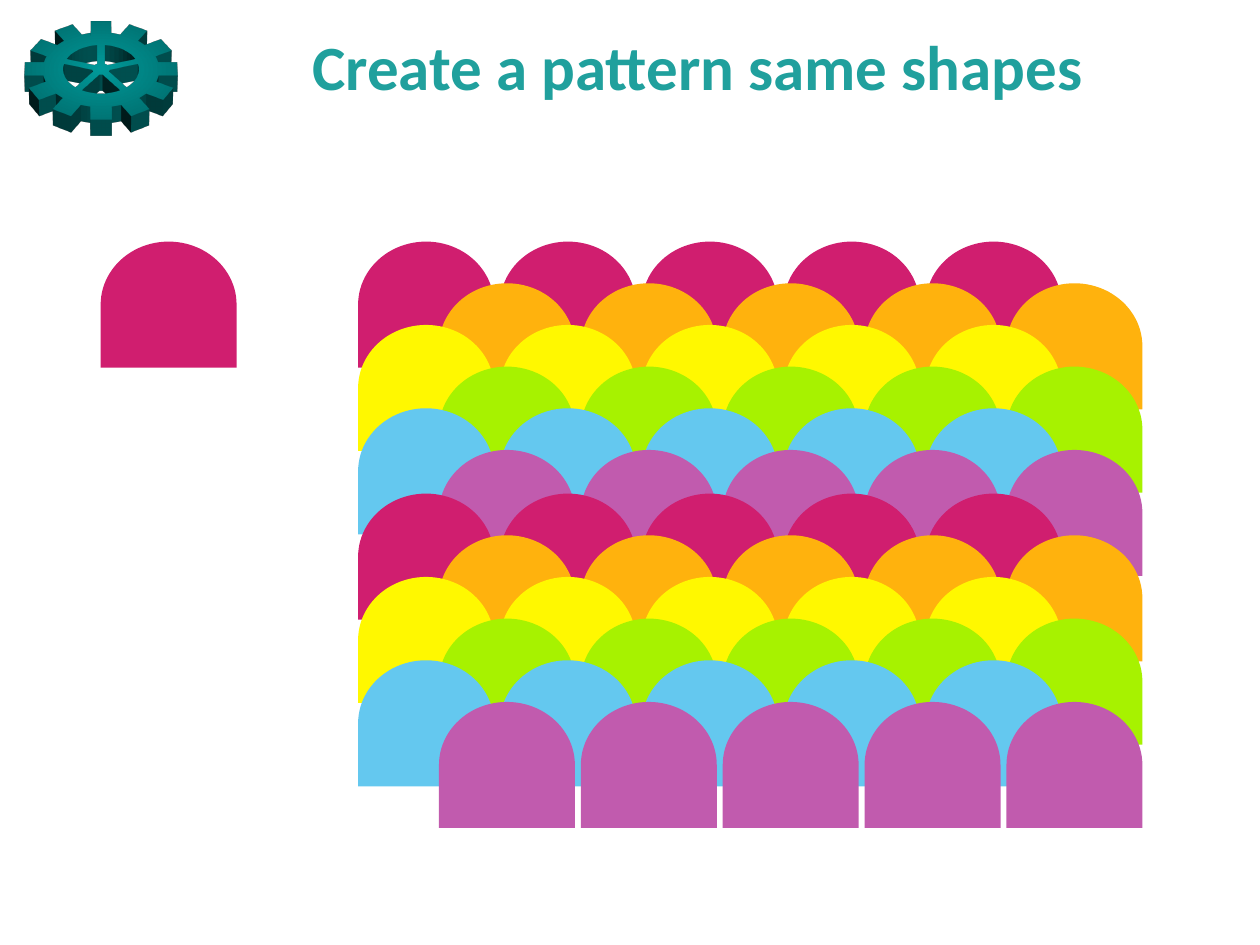
from math import asin, cos, pi, sin

from lxml import etree
from pptx import Presentation
from pptx.dml.color import RGBColor
from pptx.enum.shapes import MSO_SHAPE as Shape
from pptx.enum.text import MSO_ANCHOR as Anchor, MSO_AUTO_SIZE as AutoSize, PP_ALIGN as Align
from pptx.oxml.ns import nsdecls, qn
from pptx.util import Cm, Pt

TEAL = RGBColor(0x20, 0xA0, 0x9D)
GEAR_LIGHT = RGBColor(0x00, 0x99, 0x99)
GEAR_DARK = RGBColor(0x00, 0x66, 0x66)
PINK = RGBColor(0xD0, 0x1E, 0x6F)
ORANGE = RGBColor(0xFF, 0xB2, 0x0D)
YELLOW = RGBColor(0xFF, 0xF8, 0x00)
GREEN = RGBColor(0xA7, 0xF2, 0x00)
BLUE = RGBColor(0x64, 0xC8, 0xEF)
PURPLE = RGBColor(0xC1, 0x5B, 0xAE)

ROW_COLORS = [PINK, ORANGE, YELLOW, GREEN, BLUE, PURPLE]
COLUMNS = 5
ARCH_W, ARCH_H = 2.54, 2.74
LEFT, TOP = 7.32, 4.77
COLUMN_STEP, ROW_STEP, ROW_SHIFT = 2.86, 0.84, 1.63
BLOCK_STEP = 5.08

CIRCLE_PATH = (
    f'<a:path {nsdecls("a")} path="circle">'
    '<a:fillToRect l="50000" t="50000" r="50000" b="50000"/></a:path>'
)
SCENE = (
    f'<a:scene3d {nsdecls("a")}><a:camera prst="perspectiveRelaxed"/>'
    '<a:lightRig rig="threePt" dir="t"/></a:scene3d>'
)
DEPTH = f'<a:sp3d {nsdecls("a")} extrusionH="152400"/>'


def arc(radius, start, end, steps=8):
    angles = [start + (end - start) * i / steps for i in range(steps + 1)]
    return [(radius * cos(a), radius * sin(a)) for a in angles]


def gear_outline(teeth, outer, root, half):
    points = []
    pitch = 2 * pi / teeth
    tip, base = asin(half / outer), asin(half / root)
    for i in range(teeth):
        a = i * pitch - pi / 2
        points += arc(outer, a - tip, a + tip, 1)
        points += arc(root, a + base, a + pitch - base, 3)
    return points


def gear_holes(spokes, rim, hub, half):
    pitch = 2 * pi / spokes
    far, near = asin(half / rim), asin(half / hub)
    for i in range(spokes):
        a = i * pitch - pi / 2
        yield arc(rim, a + pitch - far, a + far) + arc(hub, a + near, a + pitch - near)


class SlideBuilder:
    font = "Calibri"
    title_size = Pt(36)

    def __init__(self, prs):
        self.s = prs.slides.add_slide(prs.slide_layouts[5])

    def title(self, text, x, y, w, h):
        sp = self.s.shapes.title
        sp.left, sp.top, sp.width, sp.height = Cm(x), Cm(y), Cm(w), Cm(h)
        tf = sp.text_frame
        tf.word_wrap = True
        tf.auto_size = AutoSize.NONE
        tf.vertical_anchor = Anchor.TOP
        p = tf.paragraphs[0]
        p.alignment = Align.CENTER
        r = p.add_run()
        r.text = text
        r.font.name = self.font
        r.font.size = self.title_size
        r.font.bold = True
        r.font.color.rgb = TEAL

    def arch(self, x, y, color, shapes=None):
        shapes = shapes or self.s.shapes
        sp = shapes.add_shape(Shape.FLOWCHART_DELAY, Cm(x), Cm(y), Cm(ARCH_W), Cm(ARCH_H))
        sp.rotation = 270
        sp.shadow.inherit = False
        sp.fill.solid()
        sp.fill.fore_color.rgb = color
        sp.line.fill.background()

    def arch_block(self, x, y):
        group = self.s.shapes.add_group_shape()
        for row, color in enumerate(ROW_COLORS):
            for column in range(COLUMNS):
                self.arch(x + column * COLUMN_STEP + row % 2 * ROW_SHIFT,
                          y + row * ROW_STEP, color, group.shapes)

    def gear(self, cx, cy):
        contours = [gear_outline(12, 1.55, 1.17, 0.21), *gear_holes(5, 0.76, 0.18, 0.08)]
        builder = None
        for contour in contours:
            points = [(Cm(cx + x), Cm(cy + y)) for x, y in contour]
            if builder is None:
                builder = self.s.shapes.build_freeform(*points[0])
            else:
                builder.move_to(*points[0])
            builder.add_line_segments(points[1:], close=True)
        sp = builder.convert_to_shape()
        sp.shadow.inherit = False
        sp.line.fill.background()
        sp.fill.gradient()
        for stop, color, position in zip(sp.fill.gradient_stops, (GEAR_LIGHT, GEAR_DARK), (0, 1)):
            stop.color.rgb = color
            stop.position = position
        props = sp.element.spPr
        lin = props.find(f".//{qn('a:lin')}")
        lin.getparent().replace(lin, etree.fromstring(CIRCLE_PATH))
        props.append(etree.fromstring(SCENE))
        props.append(etree.fromstring(DEPTH))


def main():
    prs = Presentation()
    prs.slide_width, prs.slide_height = Cm(25.4), Cm(19.05)
    slide = SlideBuilder(prs)
    slide.gear(2.03, 1.39)
    slide.title("Create a pattern same shapes", 3.99, 0.43, 20.14, 1.8)
    slide.arch(2.13, TOP, PINK)
    for block in range(2):
        slide.arch_block(LEFT, TOP + block * BLOCK_STEP)
    prs.save("out.pptx")


if __name__ == "__main__":
    main()
